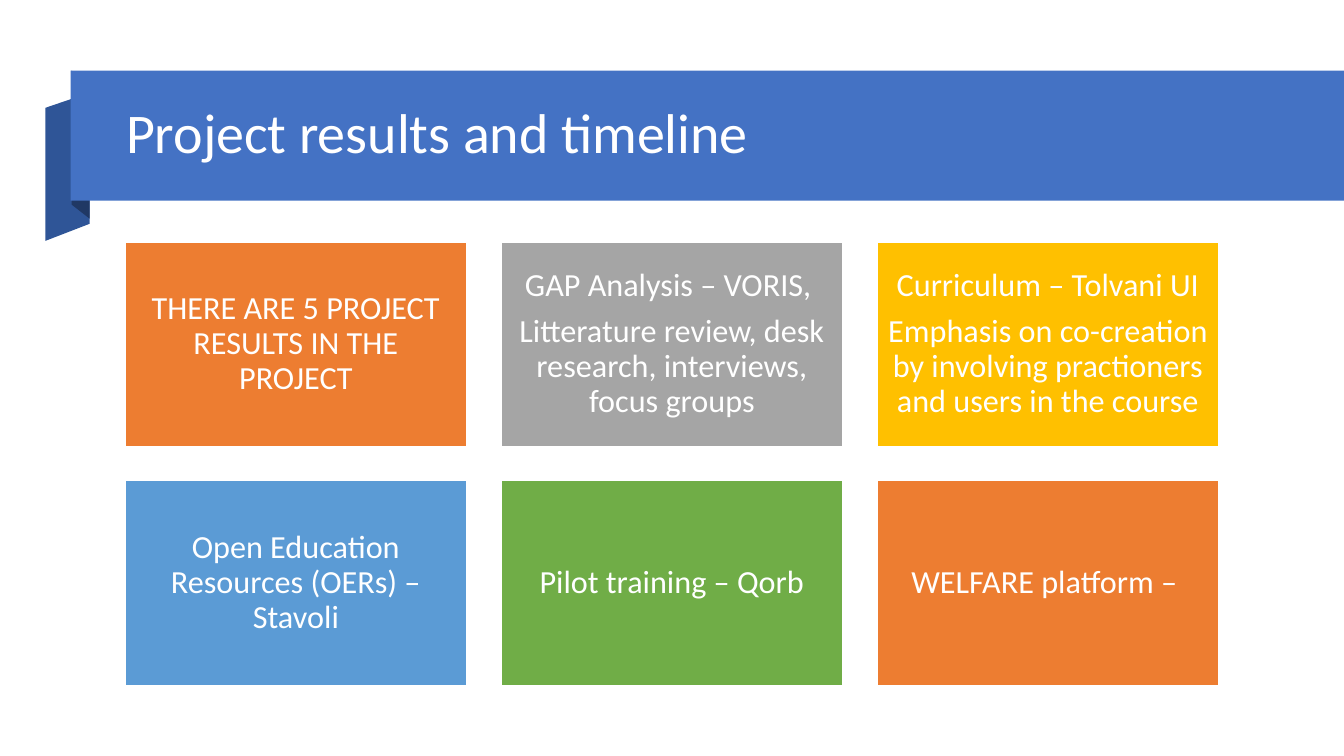
import pptx
import pptx.util
import pptx.dml.color
import pptx.enum.shapes
import pptx.enum.text

Inches = pptx.util.Inches
Pt = pptx.util.Pt


def paint(fill, color):
    fill.solid()
    fill.fore_color.rgb = pptx.dml.color.RGBColor.from_string(color)


def write(shape, text, size, alignment, space_after):
    text_frame = shape.text_frame
    text_frame.text = text
    text_frame.word_wrap = True
    text_frame.auto_size = pptx.enum.text.MSO_AUTO_SIZE.NONE
    text_frame.vertical_anchor = pptx.enum.text.MSO_ANCHOR.MIDDLE
    for paragraph in text_frame.paragraphs:
        paragraph.alignment = alignment
        paragraph.line_spacing = 0.9
        paragraph.space_after = Pt(space_after)
        for run in paragraph.runs:
            run.font.name = "Calibri"
            run.font.size = Pt(size)
            paint(run.font.fill, "FFFFFF")


presentation = pptx.Presentation()
presentation.slide_width = Inches(13.33)
presentation.slide_height = Inches(7.5)
slide = presentation.slides.add_slide(presentation.slide_layouts[5])
paint(slide.background.fill, "FFFFFF")

ribbon_folds = [
    ("2F5597", [(0.89, 2.22), (0.45, 2.39), (0.45, 1.07), (0.89, 0.92)]),
    ("203864", [(0.89, 2.17), (0.71, 2.03), (0.71, 0.7), (0.89, 0.85)]),
]
for color, points in ribbon_folds:
    corners = [(Inches(x), Inches(y)) for x, y in points]
    builder = slide.shapes.build_freeform(*corners[0], scale=1.0)
    builder.add_line_segments(corners[1:], close=True)
    fold = builder.convert_to_shape()
    fold.shadow.inherit = False
    paint(fold.fill, color)
    fold.line.fill.background()

rectangle = pptx.enum.shapes.MSO_SHAPE.RECTANGLE
banner = slide.shapes.add_shape(
    rectangle, Inches(0.7), Inches(0.7), Inches(12.63), Inches(1.29))
banner.shadow.inherit = False
paint(banner.fill, "4472C4")
banner.line.fill.background()

title = slide.shapes.title
title.left, title.top = Inches(1.15), Inches(0.86)
title.width, title.height = Inches(11.27), Inches(0.96)
write(title, "Project results and timeline", 40, pptx.enum.text.PP_ALIGN.LEFT, 0)
slide.shapes.element.append(title.element)

results = [
    ("ED7D31", "THERE ARE 5 PROJECT RESULTS IN THE PROJECT"),
    ("A5A5A5", "GAP Analysis – VORIS, \n"
               "Litterature review, desk research, interviews, focus groups"),
    ("FFC000", "Curriculum – Tolvani UI\n"
               "Emphasis on co-creation by involving practioners and users in the course"),
    ("5B9BD5", "Open Education Resources (OERs) – Stavoli"),
    ("70AD47", "Pilot training – Qorb"),
    ("ED7D31", "WELFARE platform – "),
]
for index, (color, text) in enumerate(results):
    row, column = divmod(index, 3)
    box = slide.shapes.add_shape(
        rectangle, Inches(1.24 + 3.73 * column), Inches(2.4 + 2.37 * row),
        Inches(3.39), Inches(2.03))
    box.shadow.inherit = False
    paint(box.fill, color)
    paint(box.line.fill, "FFFFFF")
    box.line.width = Pt(1)
    text_frame = box.text_frame
    text_frame.margin_left = text_frame.margin_right = Inches(0.1)
    text_frame.margin_top = text_frame.margin_bottom = Inches(0.1)
    write(box, text, 23, pptx.enum.text.PP_ALIGN.CENTER, 8)

presentation.save("out.pptx")
